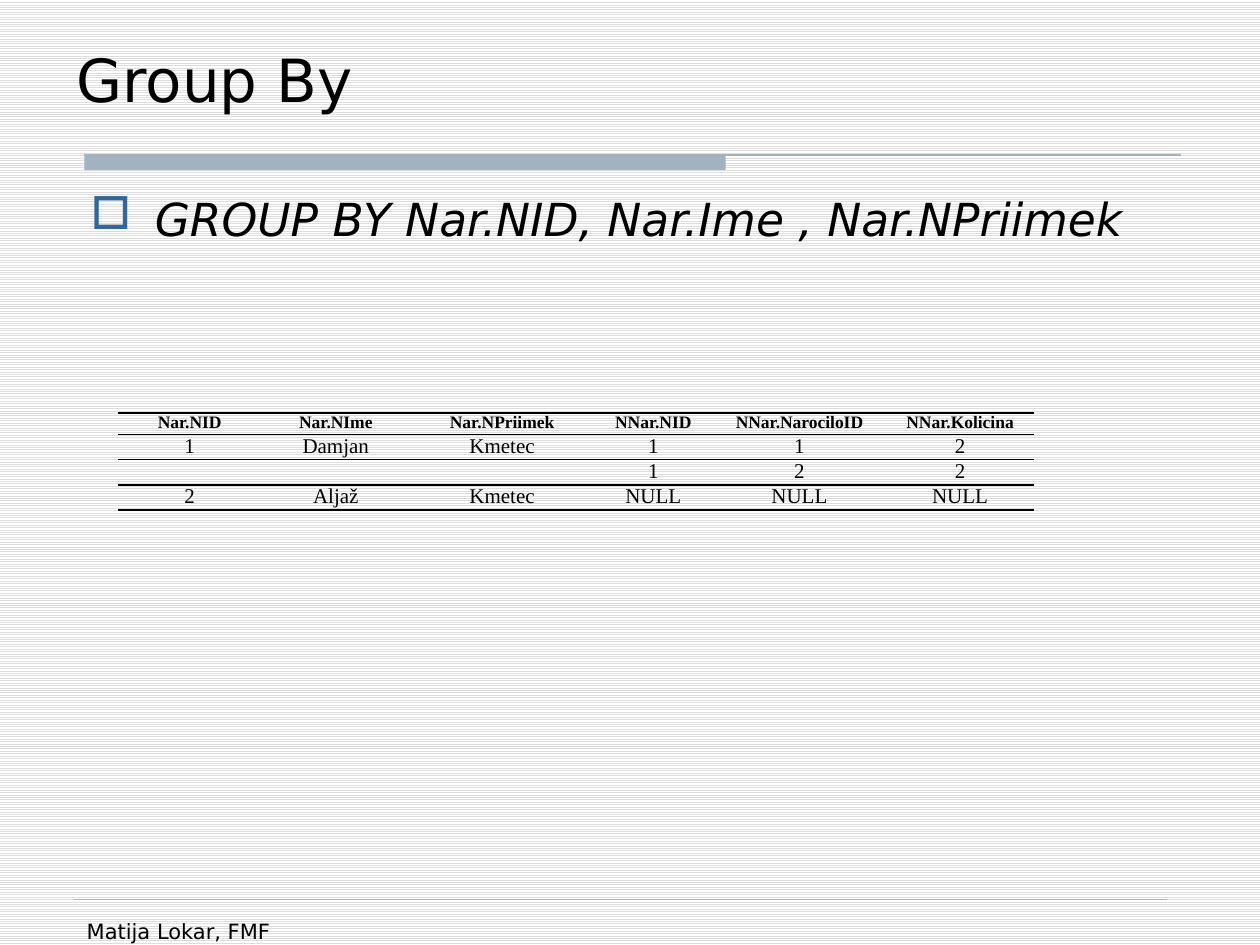
from lxml import etree
from pptx import Presentation
from pptx import util as u
from pptx.dml.color import RGBColor
from pptx.enum import dml, shapes, text
from pptx.oxml import ns

W, H = u.Inches(10), u.Inches(7.5)
BLACK = RGBColor(0x00, 0x00, 0x00)
WHITE = RGBColor(0xFF, 0xFF, 0xFF)
STRIPE = RGBColor(0xDD, 0xDD, 0xDD)
ACCENT = RGBColor(0xA3, 0xB2, 0xC1)
BULLET = RGBColor(0x33, 0x66, 0x99)
SANS, SERIF = "DejaVu Sans", "Times New Roman"
NO_STYLE = "{2D5ABB26-0587-4C30-8999-92F81FD0307C}"

COLUMNS = [11.3, 11.9, 14.5, 9.5, 13.7, 11.8]
ROWS = [
    ["Nar.NID", "Nar.NIme", "Nar.NPriimek", "NNar.NID", "NNar.NarociloID", "NNar.Kolicina"],
    ["1", "Damjan", "Kmetec", "1", "1", "2"],
    ["", "", "", "1", "2", "2"],
    ["2", "Aljaž", "Kmetec", "NULL", "NULL", "NULL"],
]
RULED_EDGES = {0, 1, 3, 4}


def x(share):
    """Return a percentage of the slide's width."""
    return u.Emu(int(W * share / 100))


def y(share):
    """Return a percentage of the slide's height."""
    return u.Emu(int(H * share / 100))


def sub(parent, tag, **attrs):
    """Append a DrawingML element to a parent."""
    return etree.SubElement(parent, ns.qn(tag), **attrs)


def set_font(p, name, size, bold=False, italic=False):
    """Set the font of a whole paragraph."""
    f = p.font
    f.name, f.size, f.bold, f.italic = name, u.Pt(size), bold, italic
    f.color.rgb = BLACK


def add_text(s, words, left, top, width, height, size, italic=False, anchor=text.MSO_ANCHOR.TOP):
    """Add a one-paragraph text box and return its paragraph."""
    tf = s.shapes.add_textbox(x(left), y(top), x(width), y(height)).text_frame
    tf.word_wrap = True
    tf.vertical_anchor = anchor
    p = tf.paragraphs[0]
    p.text = words
    set_font(p, SANS, size, italic=italic)
    return p


def add_bullet(p, char, indent):
    """Give a paragraph a coloured hanging bullet."""
    pPr = p._p.get_or_add_pPr()
    pPr.set("marL", str(indent))
    pPr.set("indent", str(-indent))
    color = etree.Element(ns.qn("a:buClr"))
    sub(color, "a:srgbClr", val=str(BULLET))
    mark = etree.Element(ns.qn("a:buChar"), char=char)
    at = pPr.index(pPr.find(ns.qn("a:defRPr")))
    pPr.insert(at, color)
    pPr.insert(at + 1, mark)


def add_rule(s, left, right, top, weight):
    """Add a horizontal accent line."""
    sp = s.shapes.add_connector(shapes.MSO_CONNECTOR.STRAIGHT, x(left), y(top), x(right), y(top))
    sp.line.color.rgb = ACCENT
    sp.line.width = u.Pt(weight)
    sub(sp._element.spPr, "a:effectLst")


def add_bar(s, left, top, width, height):
    """Add a filled accent bar."""
    sp = s.shapes.add_shape(shapes.MSO_SHAPE.RECTANGLE, x(left), y(top), x(width), y(height))
    sp.shadow.inherit = False
    sp.fill.solid()
    sp.fill.fore_color.rgb = ACCENT
    sp.line.fill.background()


def add_border(cell, tag):
    """Draw one black edge on a cell."""
    ln = etree.Element(ns.qn(tag), w=str(u.Pt(1)))
    sub(sub(ln, "a:solidFill"), "a:srgbClr", val=str(BLACK))
    cell._tc.get_or_add_tcPr().insert(0, ln)


def fill_cell(cell, words, row):
    """Write and format one table cell."""
    cell.margin_left = cell.margin_right = u.Inches(0.07)
    cell.margin_top = cell.margin_bottom = 0
    cell.fill.background()
    size = 12 if row else 10
    p = cell.text_frame.paragraphs[0]
    p.text = words
    p.alignment = text.PP_ALIGN.CENTER
    set_font(p, SERIF, size, bold=row == 0)
    if not words:
        sub(p._p, "a:endParaRPr", sz=str(size * 100))
    for edge, tag in ((row + 1, "a:lnB"), (row, "a:lnT")):
        if edge in RULED_EDGES:
            add_border(cell, tag)


def add_orders_table(s, left, top, header, height):
    """Add the grouped orders table."""
    heights = [header] + [height] * (len(ROWS) - 1)
    frame = s.shapes.add_table(len(ROWS), len(COLUMNS), x(left), y(top),
                               x(sum(COLUMNS)), y(sum(heights)))
    tbl = frame.table
    tbl.first_row = tbl.horz_banding = False
    tbl._tbl.tblPr.find(ns.qn("a:tableStyleId")).text = NO_STYLE
    for col, width in zip(tbl.columns, COLUMNS):
        col.width = x(width)
    for i, (row, words) in enumerate(zip(tbl.rows, ROWS)):
        row.height = y(heights[i])
        for cell, word in zip(row.cells, words):
            fill_cell(cell, word, i)


def main():
    """Build the Group By slide."""
    prs = Presentation()
    prs.slide_width, prs.slide_height = W, H
    s = prs.slides.add_slide(prs.slide_layouts[6])
    bg = s.background.fill
    bg.patterned()
    bg.pattern = dml.MSO_PATTERN.LIGHT_HORIZONTAL
    bg.fore_color.rgb, bg.back_color.rgb = STRIPE, WHITE

    add_bar(s, 6.7, 16.4, 50.9, 1.6)
    add_rule(s, 6.7, 93.7, 16.4, 0.75)
    add_rule(s, 5.9, 92.6, 95.2, 0.25)
    add_text(s, "Group By", 5.1, 2.8, 87.5, 10, 34, anchor=text.MSO_ANCHOR.BOTTOM)
    p = add_text(s, "GROUP BY Nar.NID, Nar.Ime , Nar.NPriimek", 6.2, 19.6, 87.5, 73.5, 26, italic=True)
    p.space_before = u.Pt(5.2)
    add_bullet(p, "□", x(5.1))
    add_text(s, "Matija Lokar, FMF", 5.9, 96.5, 21.7, 6.9, 12)
    add_orders_table(s, 9.4, 43.7, 2.27, 2.67)
    prs.save("out.pptx")


if __name__ == "__main__":
    main()
